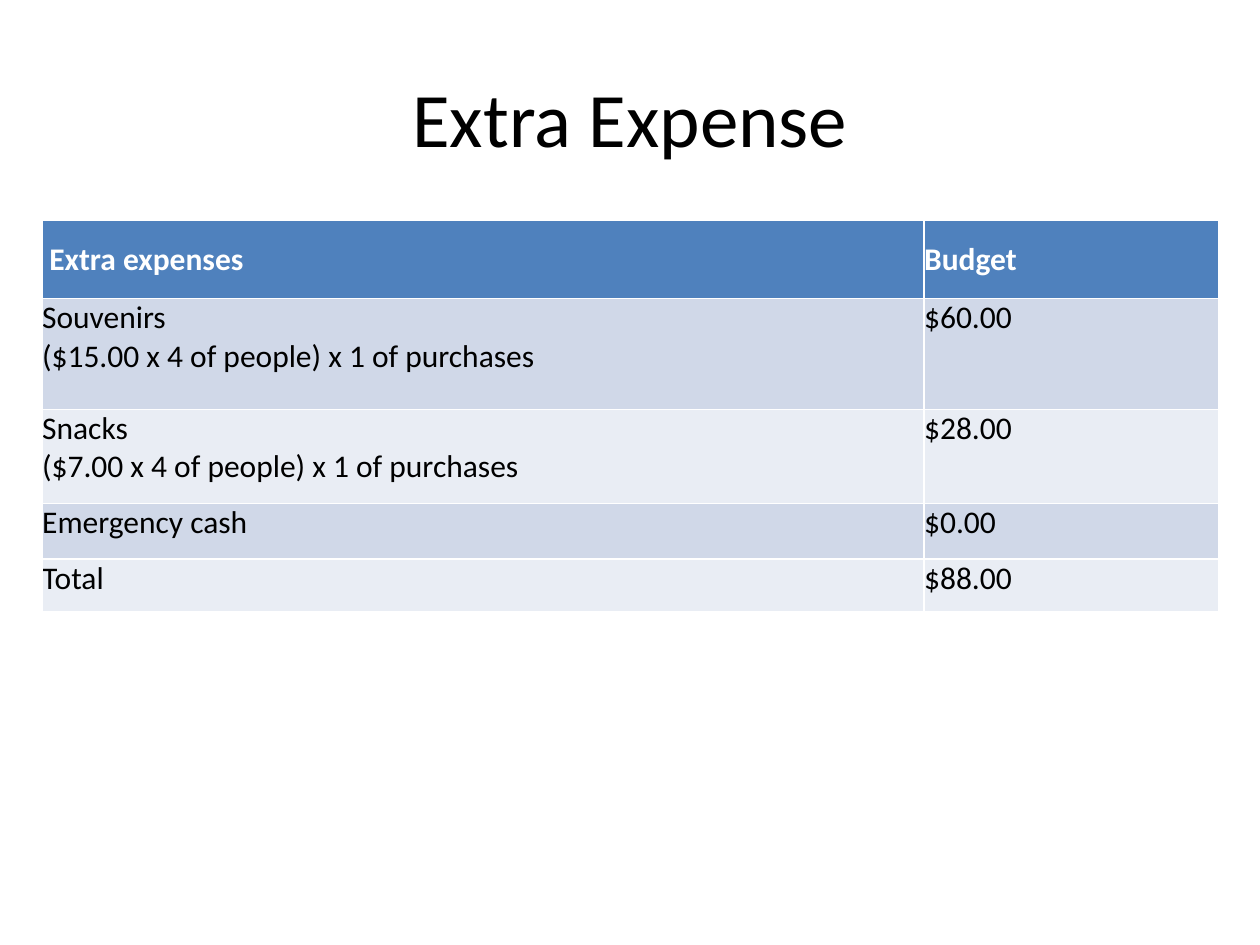
from pptx import Presentation
from pptx.dml.color import RGBColor as Rgb
from pptx.enum.text import MSO_ANCHOR as Anchor, PP_ALIGN as Align
from pptx.util import Cm, Pt

COLORS = {
    "text": "000000",
    "header_text": "FFFFFF",
    "header": "4F81BD",
    "odd_row": "D0D8E8",
    "even_row": "E9EDF4",
}
FONT = "Calibri"
COLUMN_WIDTHS = [17.78, 5.93]
EXPENSES = [
    (1.57, " Extra expenses", "Budget"),
    (2.23, "Souvenirs\n($15.00 x 4 of people) x 1 of purchases", "$60.00"),
    (1.9, "Snacks\n($7.00 x 4 of people) x 1 of purchases", "$28.00"),
    (1.12, "Emergency cash", "$0.00"),
    (1.07, "Total", "$88.00"),
]


def style_text(frame, size, color, bold=False, align=Align.LEFT):
    """Format every run of a text frame alike."""
    for paragraph in frame.paragraphs:
        paragraph.alignment = align
        for run in paragraph.runs:
            run.font.name = FONT
            run.font.size = Pt(size)
            run.font.bold = bold
            run.font.color.rgb = Rgb.from_string(COLORS[color])


def add_heading(slide, left, top, width, height):
    """Place the slide title in the given box."""
    heading = slide.shapes.title
    heading.left, heading.top = Cm(left), Cm(top)
    heading.width, heading.height = Cm(width), Cm(height)
    heading.text_frame.text = "Extra Expense"
    heading.text_frame.vertical_anchor = Anchor.MIDDLE
    style_text(heading.text_frame, 44, "text", align=Align.CENTER)


def fill_cell(cell, content, is_header, band):
    """Write and format one cell of the budget."""
    cell.margin_left = cell.margin_right = 0
    cell.margin_top = cell.margin_bottom = 0
    cell.vertical_anchor = Anchor.MIDDLE if is_header else Anchor.TOP
    cell.fill.solid()
    cell.fill.fore_color.rgb = Rgb.from_string(COLORS[band])
    cell.text_frame.text = content
    style_text(cell.text_frame, 18, "header_text" if is_header else "text", is_header)


def add_budget(slide, left, top, width, height):
    """Place the expense table in the given box."""
    budget = slide.shapes.add_table(
        len(EXPENSES), len(COLUMN_WIDTHS), Cm(left), Cm(top), Cm(width), Cm(height)
    ).table
    for column, column_width in zip(budget.columns, COLUMN_WIDTHS):
        column.width = Cm(column_width)
    for index, (row_height, *contents) in enumerate(EXPENSES):
        budget.rows[index].height = Cm(row_height)
        is_header = index == 0
        band = "header" if is_header else "odd_row" if index % 2 else "even_row"
        for cell, content in zip(budget.rows[index].cells, contents):
            fill_cell(cell, content, is_header, band)


def main():
    """Build and save the expense slide."""
    deck = Presentation()
    deck.slide_width, deck.slide_height = Cm(25.4), Cm(19.05)
    slide = deck.slides.add_slide(deck.slide_layouts[5])
    add_heading(slide, 1.27, 0.76, 22.86, 3.18)
    row_heights = [row_height for row_height, *_ in EXPENSES]
    add_budget(slide, 0.85, 4.45, sum(COLUMN_WIDTHS), sum(row_heights))
    deck.save("out.pptx")


if __name__ == "__main__":
    main()
